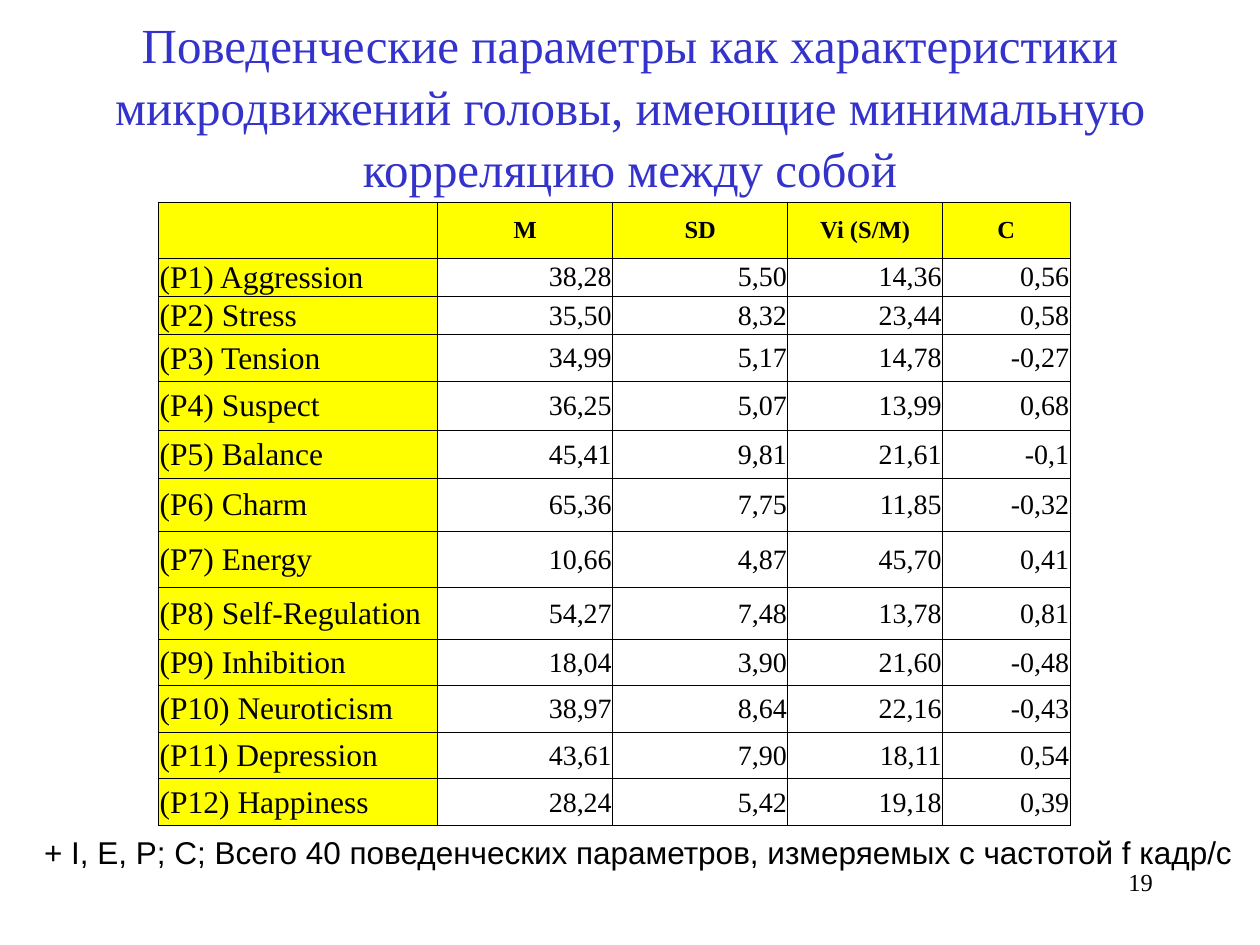
from dataclasses import dataclass

from lxml import etree
from pptx import Presentation
from pptx import util as u
from pptx.dml.color import RGBColor
from pptx.enum import text
from pptx.oxml.ns import qn


@dataclass(frozen=True)
class Theme:
    title: RGBColor = RGBColor(0x33, 0x33, 0xCC)
    ink: RGBColor = RGBColor(0, 0, 0)
    highlight: RGBColor = RGBColor(0xFF, 0xFF, 0)
    serif: str = "Times New Roman"
    sans: str = "Arial"
    title_size: int = 28
    label_size: int = 18
    value_size: int = 16
    small_size: int = 14


theme = Theme()
Align = text.PP_ALIGN
Anchor = text.MSO_ANCHOR


def write(frame, words, size, align, color=theme.ink, font=theme.serif, bold=False):
    paragraph = frame.paragraphs[0]
    paragraph.alignment = align
    run = paragraph.add_run()
    run.text = words
    run.font.name = font
    run.font.size = u.Pt(size)
    run.font.bold = bold
    run.font.color.rgb = color


def outline(cell):
    """Draw a thin line on all four sides of a table cell, below its fill in the XML order."""
    properties = cell._tc.get_or_add_tcPr()
    for position, side in enumerate(("a:lnL", "a:lnR", "a:lnT", "a:lnB")):
        line = etree.Element(qn(side), w=str(u.Pt(0.5)))
        fill = etree.SubElement(line, qn("a:solidFill"))
        etree.SubElement(fill, qn("a:srgbClr"), val=str(theme.ink))
        properties.insert(position, line)


presentation = Presentation()
presentation.slide_width = u.Cm(25.4)
presentation.slide_height = u.Cm(19.05)
slide = presentation.slides.add_slide(presentation.slide_layouts[5])

# Title
title = slide.shapes.title
title.left, title.top, title.width, title.height = u.Cm(0), u.Cm(0.43), u.Cm(25.4), u.Cm(3.35)
title.text_frame.vertical_anchor = Anchor.MIDDLE
title.text_frame.word_wrap = True
title.text_frame.auto_size = text.MSO_AUTO_SIZE.NONE
write(title.text_frame,
      "Поведенческие параметры как характеристики микродвижений головы, "
      "имеющие минимальную корреляцию между собой",
      theme.title_size, Align.CENTER, theme.title)
title.text_frame.paragraphs[0].line_spacing = 1.05

# Table of parameters
rows = [
    ("", "M", "SD", "Vi (S/M)", "С"),
    ("(P1) Aggression", "38,28", "5,50", "14,36", "0,56"),
    ("(P2) Stress", "35,50", "8,32", "23,44", "0,58"),
    ("(P3) Tension", "34,99", "5,17", "14,78", "-0,27"),
    ("(P4) Suspect", "36,25", "5,07", "13,99", "0,68"),
    ("(P5) Balance", "45,41", "9,81", "21,61", "-0,1"),
    ("(P6) Charm", "65,36", "7,75", "11,85", "-0,32"),
    ("(P7) Energy", "10,66", "4,87", "45,70", "0,41"),
    ("(P8) Self-Regulation", "54,27", "7,48", "13,78", "0,81"),
    ("(P9) Inhibition", "18,04", "3,90", "21,60", "-0,48"),
    ("(P10) Neuroticism", "38,97", "8,64", "22,16", "-0,43"),
    ("(P11) Depression", "43,61", "7,90", "18,11", "0,54"),
    ("(P12) Happiness", "28,24", "5,42", "19,18", "0,39"),
]
column_widths = [5.62, 3.53, 3.53, 3.12, 2.57]
row_heights = [1.13, 0.77, 0.77, 0.95, 0.98, 0.97, 1.07, 1.14, 1.04, 0.93, 0.94, 0.94, 0.94]

table = slide.shapes.add_table(
    len(rows), len(column_widths), u.Cm(3.2), u.Cm(4.07),
    u.Cm(sum(column_widths)), u.Cm(sum(row_heights))).table
for column, width in zip(table.columns, column_widths):
    column.width = u.Cm(width)
for row, height in zip(table.rows, row_heights):
    row.height = u.Cm(height)

for row_index, values in enumerate(rows):
    for column_index, value in enumerate(values):
        cell = table.cell(row_index, column_index)
        is_header, is_label = row_index == 0, column_index == 0
        cell.margin_left = cell.margin_right = cell.margin_top = u.Cm(0.02)
        cell.margin_bottom = u.Cm(0)
        cell.vertical_anchor = Anchor.MIDDLE
        if is_header or is_label:
            cell.fill.solid()
            cell.fill.fore_color.rgb = theme.highlight
        else:
            cell.fill.background()
        outline(cell)
        if is_header and is_label:
            continue
        if is_header:
            size, align = theme.small_size, Align.CENTER
        elif is_label:
            size, align = theme.label_size, Align.LEFT
        else:
            size, align = theme.value_size, Align.RIGHT
        write(cell.text_frame, value, size, align, bold=is_header)

# Note under the table
note = slide.shapes.add_textbox(u.Cm(0.64), u.Cm(16.66), u.Cm(24.71), u.Cm(1.02))
note.text_frame.word_wrap = False
note.text_frame.auto_size = text.MSO_AUTO_SIZE.SHAPE_TO_FIT_TEXT
write(note.text_frame,
      "+ I, E, P; C; Всего 40 поведенческих параметров, измеряемых с частотой f кадр/с",
      theme.label_size, Align.LEFT, font=theme.sans)

# Page number
page_number = slide.shapes.add_textbox(u.Cm(18.21), u.Cm(17.35), u.Cm(5.28), u.Cm(1.27))
page_number.text_frame.word_wrap = True
write(page_number.text_frame, "19", theme.small_size, Align.RIGHT)

presentation.save("out.pptx")
